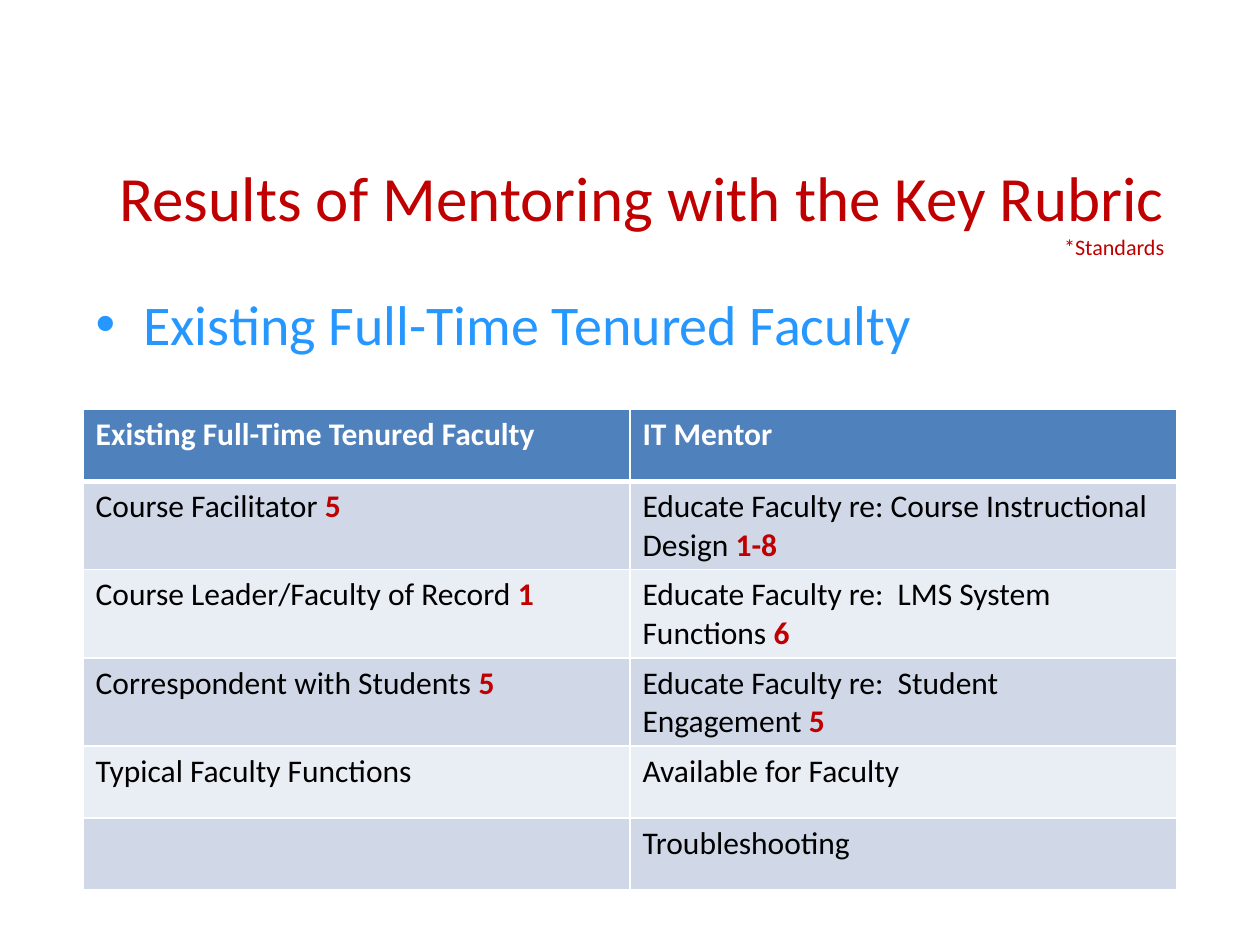
"""Build the slide on the results of mentoring existing full-time faculty."""
from copy import deepcopy

from lxml import etree
from pptx import Presentation
from pptx.dml.color import RGBColor
from pptx.enum.text import MSO_ANCHOR, MSO_AUTO_SIZE, PP_ALIGN
from pptx.oxml.ns import qn
from pptx.util import Inches, Pt

RIGHT = PP_ALIGN.RIGHT
MIDDLE = MSO_ANCHOR.MIDDLE
NO_AUTOFIT = MSO_AUTO_SIZE.NONE
TITLE_ONLY = 5
LEFT, WIDTH = 0.66, 8.68

ROLES = [
    [("Existing Full-Time Tenured Faculty", ""), ("IT Mentor", "")],
    [("Course Facilitator ", "5"),
     ("Educate Faculty re: Course Instructional Design ", "1-8")],
    [("Course Leader/Faculty of Record ", "1"),
     ("Educate Faculty re:  LMS System Functions ", "6")],
    [("Correspondent with Students ", "5"),
     ("Educate Faculty re:  Student Engagement ", "5")],
    [("Typical Faculty Functions", ""), ("Available for Faculty", "")],
    [("", ""), ("Troubleshooting", "")],
]


def color(value):
    return RGBColor.from_string(value)


class MentoringSlide:
    font = "Calibri"
    red, blue, white, black = "C00000", "2597FF", "FFFFFF", "000000"
    header, bands = "4F81BD", ("E9EDF4", "D0D8E8")

    def __init__(self, slide):
        self.slide = slide

    def format_run(self, run, size, hue, bold=False):
        run.font.name = self.font
        run.font.size = Pt(size)
        run.font.bold = bold
        run.font.color.rgb = color(hue)

    def add_title(self, heading, note, top, height):
        title = self.slide.shapes.title
        title.left, title.top = Inches(LEFT), Inches(top)
        title.width, title.height = Inches(WIDTH), Inches(height)
        frame = title.text_frame
        frame.text = f"{heading}\v{note}"
        frame.auto_size = NO_AUTOFIT
        frame.vertical_anchor = MIDDLE
        paragraph = frame.paragraphs[0]
        paragraph.alignment = RIGHT
        for run, size in zip(paragraph.runs, (36, 12.6)):
            self.format_run(run, size, self.red)
        line_break = paragraph._p.find(qn("a:br"))
        line_break.append(deepcopy(paragraph.runs[0]._r.find(qn("a:rPr"))))

    def add_bullet(self, text, top, height):
        box = self.slide.shapes.add_textbox(
            Inches(LEFT), Inches(top), Inches(WIDTH), Inches(height))
        frame = box.text_frame
        frame.word_wrap = True
        frame.text = text
        paragraph = frame.paragraphs[0]
        properties = paragraph._p.get_or_add_pPr()
        properties.set("marL", str(Inches(0.38)))
        properties.set("indent", str(-Inches(0.38)))
        etree.SubElement(properties, qn("a:buFont"), typeface="Arial")
        etree.SubElement(properties, qn("a:buChar"), char="•")
        self.format_run(paragraph.runs[0], 32, self.blue)

    def add_border(self, cell, side, points):
        properties = cell._tc.get_or_add_tcPr()
        line = etree.SubElement(properties, qn(f"a:{side}"), w=str(Pt(points)))
        fill = etree.SubElement(line, qn("a:solidFill"))
        etree.SubElement(fill, qn("a:srgbClr"), val=self.white)

    def fill_cell(self, cell, row, role, standard):
        is_header = row == 0
        for side in ("lnL", "lnR", "lnT", "lnB"):
            heavy = (row, side) in ((0, "lnB"), (1, "lnT"))
            self.add_border(cell, side, 3 if heavy else 1)
        cell.fill.solid()
        cell.fill.fore_color.rgb = color(
            self.header if is_header else self.bands[row % 2])
        paragraph = cell.text_frame.paragraphs[0]
        if role:
            run = paragraph.add_run()
            run.text = role
            self.format_run(
                run, 18, self.white if is_header else self.black, is_header)
        if standard:
            run = paragraph.add_run()
            run.text = standard
            self.format_run(run, 18, self.red, True)

    def add_table(self, rows, top, row_height):
        columns = len(rows[0])
        table = self.slide.shapes.add_table(
            len(rows), columns, Inches(LEFT), Inches(top),
            Inches(WIDTH), Inches(row_height * len(rows))).table
        for row, roles in enumerate(rows):
            table.rows[row].height = Inches(row_height)
            for column, (role, standard) in enumerate(roles):
                self.fill_cell(table.cell(row, column), row, role, standard)


def main():
    presentation = Presentation()
    presentation.slide_width = Inches(10)
    presentation.slide_height = Inches(7.5)
    layout = presentation.slide_layouts[TITLE_ONLY]
    mentoring = MentoringSlide(presentation.slides.add_slide(layout))
    mentoring.add_title(
        "Results of Mentoring with the Key Rubric", "*Standards", 1.24, 0.84)
    mentoring.add_bullet("Existing Full-Time Tenured Faculty", 2.25, 4.68)
    mentoring.add_table(ROLES, 3.25, 0.57)
    presentation.save("out.pptx")


if __name__ == "__main__":
    main()
